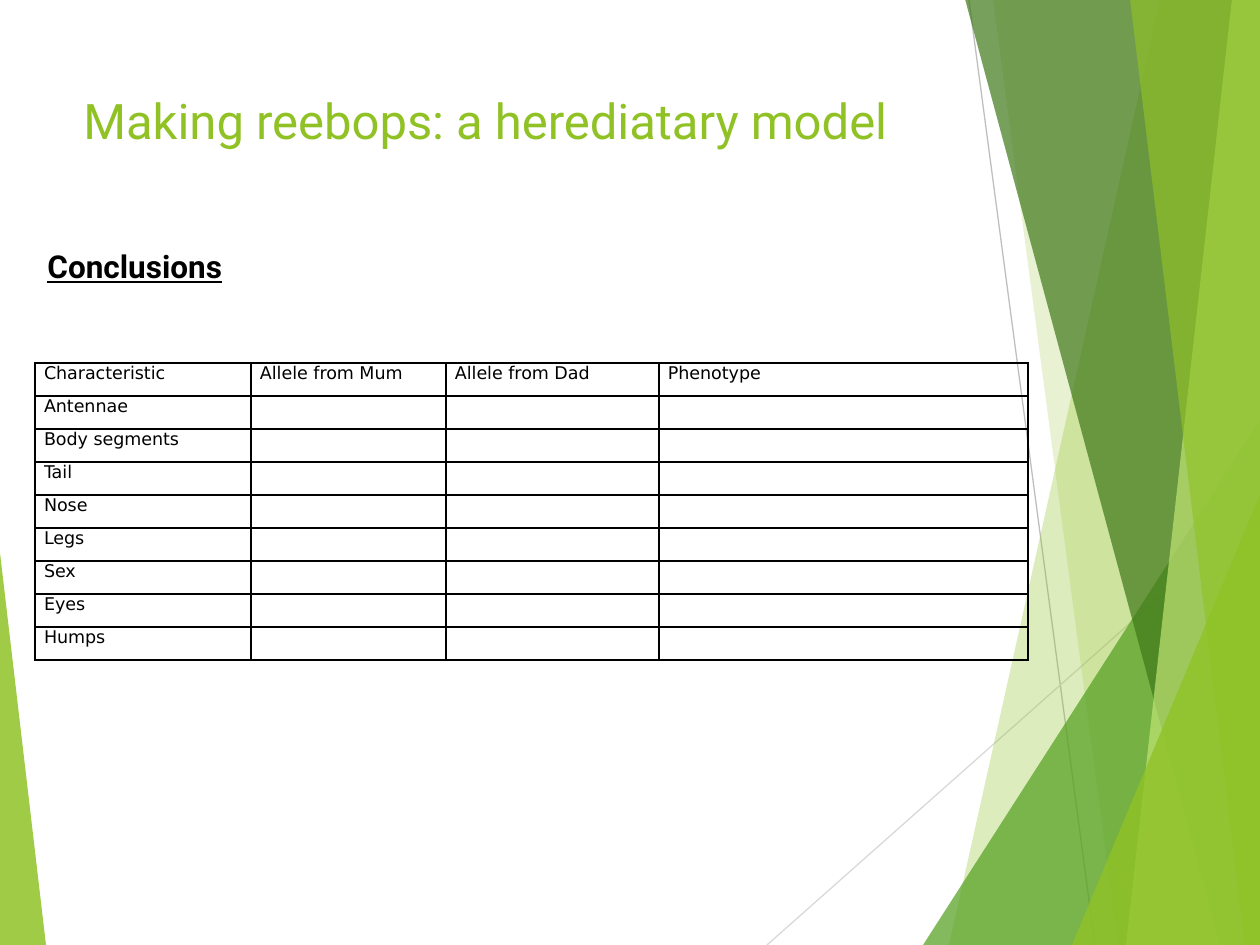
from dataclasses import dataclass

from lxml.etree import SubElement
from pptx import Presentation
from pptx.dml.color import RGBColor
from pptx.enum.shapes import MSO_CONNECTOR as Conn, MSO_SHAPE as Shape
from pptx.enum.text import MSO_ANCHOR as Anchor
from pptx.oxml.ns import qn
from pptx.slide import Slide
from pptx.util import Pt

PX = 914400 / 126
W, H = 1260, 945
BLACK = RGBColor(0x00, 0x00, 0x00)
LIME = RGBColor(0x90, 0xC2, 0x26)
PALE_LIME = RGBColor(0xC0, 0xE4, 0x74)
GREEN = RGBColor(0x54, 0xA0, 0x21)
DARK_GREEN = RGBColor(0x3F, 0x78, 0x19)
GREY = RGBColor(0xBF, 0xBF, 0xBF)
LIGHT_GREY = RGBColor(0xD9, 0xD9, 0xD9)

LINES = [((969, 0), (1095, H), GREY), ((W, 508), (767, H), LIGHT_GREY)]
BACK_BANDS = [(1160, 949, LIME, 30), (993, 1118, LIME, 20)]
FRONT_BANDS = [(965, 1220, DARK_GREEN, 70), (1232, 1126, PALE_LIME, 70),
               (1130, 1245, LIME, 65)]
COLUMNS = {"Characteristic": 216, "Allele from Mum": 195,
           "Allele from Dad": 213, "Phenotype": 369}
TRAITS = ["Antennae", "Body segments", "Tail", "Nose", "Legs", "Sex", "Eyes", "Humps"]


def emu(*px):
    return [round(v * PX) for v in px]


def put_text(tf, text, size=18, font="Roboto", color=BLACK, bold=False, underline=False):
    p = tf.paragraphs[0]
    if not text:
        p._p.get_or_add_endParaRPr().set("sz", str(size * 100))
        return
    r = p.add_run()
    r.text = text
    f = r.font
    f.size, f.name, f.bold, f.underline = Pt(size), font, bold, underline
    f.color.rgb = color


@dataclass
class Painter:
    """Draws styled elements on the current slide."""
    slide: Slide
    line_width: float = 0.75
    border_width: float = 1
    cell_font: str = "DejaVu Sans"
    cell_size: int = 10

    def line(self, start, end, color):
        cn = self.slide.shapes.add_connector(Conn.STRAIGHT, *emu(*start, *end))
        cn.line.color.rgb = color
        cn.line.width = Pt(self.line_width)
        SubElement(cn._element.spPr, qn("a:effectLst"))

    def paint(self, sp, color, opacity):
        sp.shadow.inherit = False
        sp.fill.solid()
        sp.fill.fore_color.rgb = color
        sp.line.fill.background()
        clr = sp._element.spPr.find(qn("a:solidFill"))[0]
        SubElement(clr, qn("a:alpha")).set("val", str(opacity * 1000))

    def band(self, top_x, bottom_x, color, opacity):
        fb = self.slide.shapes.build_freeform(top_x, -1, scale=PX)
        fb.add_line_segments([(W, -1), (W, H), (bottom_x, H)], close=True)
        self.paint(fb.convert_to_shape(), color, opacity)

    def triangle(self, x, y, w, apex, color, opacity):
        sp = self.slide.shapes.add_shape(Shape.ISOSCELES_TRIANGLE, *emu(x, y, w, H - y))
        sp.adjustments[0] = apex
        self.paint(sp, color, opacity)

    def text(self, x, y, w, h, text, **fmt):
        tf = self.slide.shapes.add_textbox(*emu(x, y, w, h)).text_frame
        tf.word_wrap = True
        put_text(tf, text, **fmt)

    def cell(self, cell, text):
        tc_pr = cell._tc.get_or_add_tcPr()
        for side in ("lnL", "lnR", "lnT", "lnB"):
            ln = SubElement(tc_pr, qn(f"a:{side}"), w=str(Pt(self.border_width)))
            fill = SubElement(ln, qn("a:solidFill"))
            SubElement(fill, qn("a:srgbClr"), val=str(BLACK))
        cell.fill.background()
        cell.margin_left, cell.margin_right = emu(9, 9)
        cell.margin_top = cell.margin_bottom = 0
        cell.vertical_anchor = Anchor.TOP
        put_text(cell.text_frame, text, size=self.cell_size, font=self.cell_font)

    def table(self, x, y, widths, row_h, rows):
        box = emu(x, y, sum(widths), row_h * len(rows))
        tbl = self.slide.shapes.add_table(len(rows), len(widths), *box).table
        tbl.first_row = tbl.horz_banding = False
        for col, width in zip(tbl.columns, emu(*widths)):
            col.width = width
        for i, row in enumerate(rows):
            tbl.rows[i].height = emu(row_h)[0]
            for j, text in enumerate(row):
                self.cell(tbl.cell(i, j), text)


def main():
    prs = Presentation()
    prs.slide_width, prs.slide_height = emu(W, H)
    s = Painter(prs.slides.add_slide(prs.slide_layouts[6]))

    for line in LINES:
        s.line(*line)
    for band in BACK_BANDS:
        s.band(*band)
    s.triangle(923, 420, 337, 1, GREEN, 72)
    for band in FRONT_BANDS:
        s.band(*band)
    s.triangle(1072, 495, 188, 1, LIME, 80)
    s.triangle(0, 553, 46, 0, LIME, 85)

    s.text(71, 84, 888, 181, "Making reebops: a herediatary model", size=28, color=LIME)
    rows = [list(COLUMNS)] + [[trait, "", "", ""] for trait in TRAITS]
    s.table(35, 363, list(COLUMNS.values()), 33, rows)
    s.text(35, 241, 208, 50, "Conclusions", bold=True, underline=True)
    prs.save("out.pptx")


if __name__ == "__main__":
    main()
